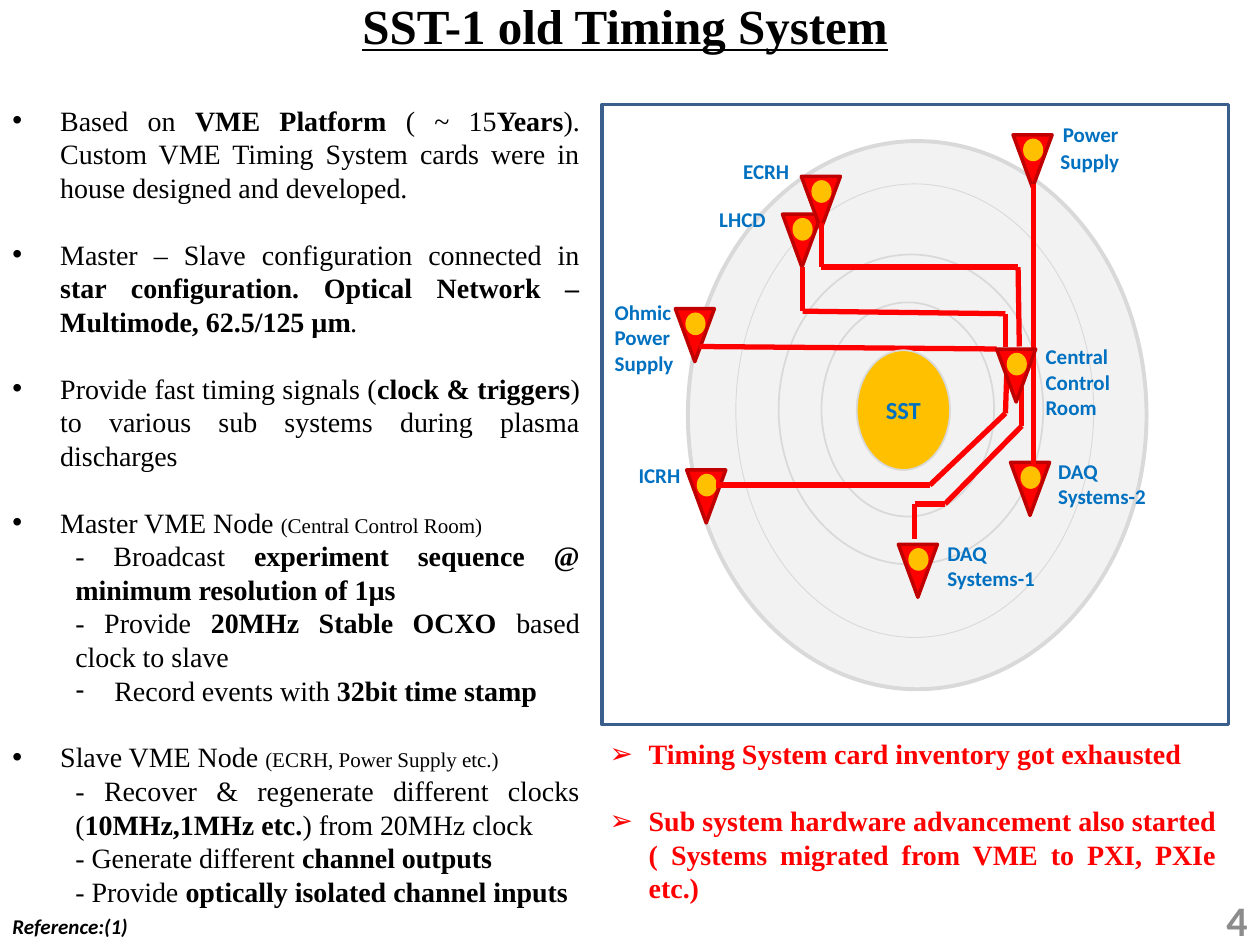
from lxml import etree
from pptx import Presentation
from pptx.dml.color import RGBColor
from pptx.enum.shapes import MSO_CONNECTOR, MSO_SHAPE
from pptx.enum.text import MSO_ANCHOR, MSO_AUTO_SIZE, PP_ALIGN
from pptx.oxml.ns import qn
from pptx.util import Inches, Pt

prs = Presentation()
prs.slide_width, prs.slide_height = Inches(10), Inches(7.5)
s = prs.slides.add_slide(prs.slide_layouts[6])


def shape(kind, box, fill=None, line=None, width=1):
    """Add a preset shape with a plain fill and outline."""
    sp = s.shapes.add_shape(kind, *map(Inches, box))
    sp.shadow.inherit = False
    if fill:
        sp.fill.solid()
        sp.fill.fore_color.rgb = RGBColor.from_string(fill)
    else:
        sp.fill.background()
    if line:
        sp.line.color.rgb = RGBColor.from_string(line)
        sp.line.width = Pt(width)
    else:
        sp.line.fill.background()
    return sp


def text(tf, paras, font, color, frame):
    """Fill a text frame; each paragraph is (runs, format, bullet, margin, indent)."""
    for key, value in frame.items():
        setattr(tf, key, value)
    for i, (runs, fmt, bullet, margin, indent) in enumerate(paras):
        p = tf.paragraphs[0] if i == 0 else tf.add_paragraph()
        for key, value in fmt.items():
            setattr(p, key, value)
        pPr = p._p.get_or_add_pPr()
        pPr.set("marL", str(Inches(margin)))
        pPr.set("indent", str(Inches(indent)))
        if bullet:
            etree.SubElement(pPr, qn("a:buFont")).set("typeface", "Arial")
            etree.SubElement(pPr, qn("a:buChar")).set("char", bullet)
        for words, extra in runs:
            r = p.add_run()
            r.text = words
            for key, value in {**font, **extra}.items():
                setattr(r.font, key, value)
            r.font.color.rgb = RGBColor.from_string(color)


# Formats
GROW = {"word_wrap": True, "auto_size": MSO_AUTO_SIZE.SHAPE_TO_FIT_TEXT}
NOWRAP = {**GROW, "word_wrap": False}
MIDDLE = {"word_wrap": True, "vertical_anchor": MSO_ANCHOR.MIDDLE}
SERIF = {"name": "Times New Roman", "size": Pt(16)}
LABEL = {"name": "Calibri", "size": Pt(12), "bold": True}
N, B, SMALL = {}, {"bold": True}, {"size": Pt(12)}
JUST = {"alignment": PP_ALIGN.JUSTIFY}
GAP = {**JUST, "space_before": Pt(19)}
SUB = {**JUST, "level": 1}
CENTER = {"alignment": PP_ALIGN.CENTER}
BULLET = ("•", 0.38, -0.38)
ARROW = ("➢", 0.31, -0.31)
PLAIN = (None, 0, 0)
INSET = (None, 0.5, 0)

# Title, body, conclusions, slide number and reference
blocks = [
    ((0.25, -0.03, 9.42, 0.53), [
        ([("SST-1 old Timing System", N)], {**CENTER, "line_spacing": 0.9}, *PLAIN),
    ], {**SERIF, "size": Pt(28), "bold": True, "underline": True}, "000000", GROW),
    ((0, 0.77, 4.7, 6.56), [
        ([("Based on ", N), ("VME Platform", B), (" ( ~ 15", N), ("Years", B),
          ("). Custom VME Timing System cards were in house designed and developed.", N)],
         JUST, *BULLET),
        ([("Master – Slave configuration connected in ", N),
          ("star configuration. Optical Network – Multimode, 62.5/125 µm", B),
          (".", {"italic": True})], GAP, *BULLET),
        ([("Provide fast timing signals (", N), ("clock & triggers", B),
          (") to various sub systems during plasma discharges", N)], GAP, *BULLET),
        ([("Master VME Node ", N), ("(Central Control Room)", SMALL)], GAP, *BULLET),
        ([("- Broadcast ", N), ("experiment sequence @ minimum resolution of 1µs", B)],
         SUB, *INSET),
        ([("- Provide ", N), ("20MHz Stable OCXO ", B), ("based clock to slave", N)],
         SUB, *INSET),
        ([("Record events with ", N), ("32bit time stamp", B)], SUB, "-", 0.81, -0.31),
        ([("Slave VME Node ", N), ("(ECRH, Power Supply etc.)", SMALL)], GAP, *BULLET),
        ([("- Recover & regenerate different clocks (", N), ("10MHz,1MHz etc.", B),
          (") from 20MHz clock", N)], SUB, *INSET),
        ([("- Generate different ", N), ("channel outputs", B)], SUB, *INSET),
        ([("- Provide ", N), ("optically isolated channel inputs", B)], SUB, *INSET),
    ], SERIF, "000000", GROW),
    ((4.74, 5.8, 5.01, 1.45), [
        ([("Timing System card inventory got exhausted", N)], JUST, *ARROW),
        ([("Sub system hardware advancement also started "
           "( Systems migrated from VME to PXI, PXIe etc.)", N)], GAP, *ARROW),
    ], {**SERIF, "bold": True}, "FF0000", GROW),
    ((7.67, 7.1, 2.33, 0.4), [
        ([("4", N)], {"alignment": PP_ALIGN.RIGHT}, *PLAIN),
    ], {**LABEL, "size": Pt(24)}, "8C8C8C", MIDDLE),
    ((0, 7.2, 1.13, 0.3), [
        ([("Reference:(1)", N)], {}, *PLAIN),
    ], {**LABEL, "italic": True}, "000000", NOWRAP),
]
for box, *content in blocks:
    text(s.shapes.add_textbox(*map(Inches, box)).text_frame, *content)

# Diagram frame and the rings around the machine
shape(MSO_SHAPE.RECTANGLE, (4.78, 0.83, 4.97, 4.92), None, "3A5F8C", 2)
rings = [((5.46, 1.12, 3.64, 4.35), 2.25, 100), ((5.84, 1.46, 2.84, 3.6), 0.5, 100),
         ((6.18, 2.02, 2.1, 2.46), 1, 50), ((6.52, 2.4, 1.37, 1.7), 1, 100)]
for box, width, opacity in rings:
    sp = shape(MSO_SHAPE.OVAL, box, "F2F2F2", "D9D9D9", width)
    if opacity < 100:
        clr = sp._element.spPr.find(qn("a:solidFill"))[0]
        etree.SubElement(clr, qn("a:alpha")).set("val", str(opacity * 1000))

# Optical links from the subsystems to the control room
routes = [
    [(6.37, 2.12), (6.37, 2.47), (7.98, 2.49), (7.98, 2.75)],
    [(6.52, 1.77), (6.52, 2.12), (8.08, 2.12), (8.09, 2.75)],
    [(8.2, 1.46), (8.2, 2.8), (8.2, 3.68)],
    [(7.91, 2.77), (5.55, 2.75)],
    [(7.99, 2.97), (7.98, 3.28), (7.38, 3.85), (5.68, 3.85)],
    [(8.11, 3.07), (8.11, 3.38), (7.5, 4), (7.26, 4), (7.26, 4.28)],
]
# Nodes: marker corner, label box, label lines
nodes = [
    ((8.04, 1.07), (8.28, 0.83, 0.71, 0.61), [" Power", " Supply"]),
    ((8.02, 3.67), (8.3, 3.59, 0.9, 0.5), ["DAQ", "Systems-2"]),
    ((7.13, 4.32), (7.42, 4.24, 0.9, 0.5), ["DAQ", "Systems-1"]),
    ((5.45, 3.73), (4.97, 3.62, 0.54, 0.3), ["ICRH"]),
    ((5.36, 2.45), (4.78, 2.33, 0.69, 0.71), ["Ohmic", "Power", "Supply"]),
    ((6.21, 1.7), (5.61, 1.59, 0.58, 0.3), ["LHCD"]),
    ((6.36, 1.4), (5.8, 1.21, 0.57, 0.3), ["ECRH"]),
    ((7.91, 2.77), (8.2, 2.68, 0.72, 0.71), ["Central", "Control", "Room"]),
]
for (x, y), box, lines in nodes:
    # Links and machine core lie above the subsystems, below the control room
    if lines[0] == "Central":
        for route in routes:
            for start, end in zip(route, route[1:]):
                ln = s.shapes.add_connector(MSO_CONNECTOR.STRAIGHT, *map(Inches, start + end))
                ln.line.color.rgb = RGBColor.from_string("FF0000")
                ln.line.width = Pt(3)
                etree.SubElement(ln._element.spPr, qn("a:effectLst"))
        sp = shape(MSO_SHAPE.OVAL, (6.8, 2.78, 0.74, 0.95), "FFC000", "D9D9D9")
        text(sp.text_frame, [([("SST", N)], CENTER, *PLAIN)],
             {**LABEL, "size": Pt(14)}, "0070C0", MIDDLE)
    shape(MSO_SHAPE.FLOWCHART_MERGE, (x, y, 0.31, 0.42), "FF0000", "C00000", 2)
    shape(MSO_SHAPE.OVAL, (x + 0.08, y + 0.03, 0.16, 0.18), "FFC000")
    paras = [([(line, N)], {}, *PLAIN) for line in lines]
    if lines[0] == " Power":
        paras[0] = ([(" ", {"size": Pt(18)}), ("Power", N)], {}, *PLAIN)
    text(s.shapes.add_textbox(*map(Inches, box)).text_frame, paras, LABEL, "0070C0", NOWRAP)

prs.save("out.pptx")
